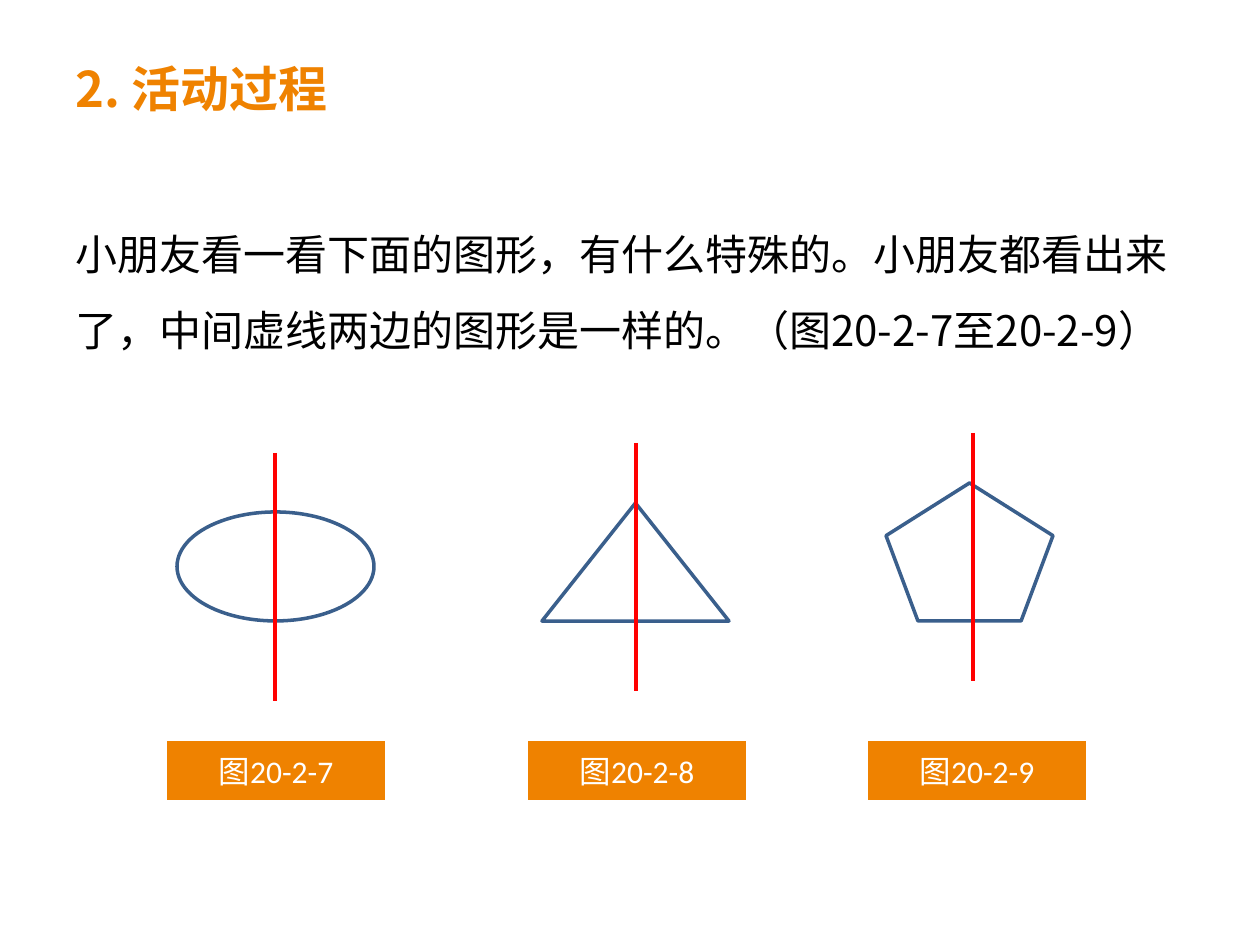
from lxml.etree import SubElement
from pptx import Presentation
from pptx.dml.color import RGBColor
from pptx.enum.shapes import MSO_CONNECTOR, MSO_SHAPE
from pptx.enum.text import MSO_ANCHOR, PP_ALIGN
from pptx.oxml.ns import qn
from pptx.util import Emu, Pt

CJK = "Noto Sans CJK SC"
ORANGE, WHITE, BLACK, BLUE, RED = "EF8200", "FFFFFF", "000000", "3A5F8C", "FF0000"


def px(n):
    """Pixels at 126 to the inch, as EMU."""
    return Emu(round(n * 914400 / 126))


def rgb(value):
    return RGBColor.from_string(value)


def write(tf, text, size, color, font=CJK, bold=False, align=PP_ALIGN.LEFT):
    """Fill a text frame with one paragraph and return that paragraph."""
    tf.word_wrap = True
    tf.text = text
    p = tf.paragraphs[0]
    p.alignment = align
    f = p.font
    f.size, f.bold, f.name = Pt(size), bold, font
    f.color.rgb = rgb(color)
    r_pr = p._p.pPr.find(qn("a:defRPr"))
    SubElement(r_pr, qn("a:ea")).set("typeface", CJK)
    return p


def add_title(s, text):
    sp = s.shapes.title
    sp.left, sp.top, sp.width, sp.height = map(px, (63, 38, 1134, 100))
    sp.text_frame.vertical_anchor = MSO_ANCHOR.MIDDLE
    write(sp.text_frame, text, 28, ORANGE, bold=True)


def add_body(s, text):
    sp = s.shapes.add_textbox(*map(px, (63, 197, 1134, 513)))
    p = write(sp.text_frame, text, 24, BLACK)
    p.line_spacing = 1.5
    p.space_before = Pt(5)


def add_outline(s, kind, box):
    sp = s.shapes.add_shape(kind, *map(px, box))
    sp.shadow.inherit = False
    sp.fill.background()
    sp.line.color.rgb = rgb(BLUE)
    sp.line.width = Pt(2)


def add_axis(s, x, top):
    """Draw a vertical line of symmetry."""
    line = s.shapes.add_connector(MSO_CONNECTOR.STRAIGHT, px(x), px(top), px(x), px(top + 248))
    line.line.color.rgb = rgb(RED)
    line.line.width = Pt(2.25)
    SubElement(line._element.spPr, qn("a:effectLst"))


def add_label(s, x, text):
    sp = s.shapes.add_shape(MSO_SHAPE.RECTANGLE, px(x), px(741), px(218), px(59))
    sp.shadow.inherit = False
    sp.fill.solid()
    sp.fill.fore_color.rgb = rgb(ORANGE)
    sp.line.fill.background()
    sp.text_frame.vertical_anchor = MSO_ANCHOR.MIDDLE
    write(sp.text_frame, text, 18, WHITE, "Calibri", align=PP_ALIGN.CENTER)


def main():
    prs = Presentation()
    prs.slide_width, prs.slide_height = px(1260), px(945)
    s = prs.slides.add_slide(prs.slide_layouts[5])

    add_title(s, "2. 活动过程")
    add_body(s, "小朋友看一看下面的图形，有什么特殊的。小朋友都看出来了，"
                "中间虚线两边的图形是一样的。（图20-2-7至20-2-9）")

    # kind, outline box, axis x and top, label left
    figures = [
        (MSO_SHAPE.OVAL, (177, 512, 197, 109), (275, 453), 167),
        (MSO_SHAPE.ISOSCELES_TRIANGLE, (542, 503, 187, 118), (636, 443), 528),
        (MSO_SHAPE.REGULAR_PENTAGON, (886, 483, 167, 138), (973, 433), 868),
    ]
    for number, (kind, box, axis, label_x) in enumerate(figures, 7):
        add_outline(s, kind, box)
        add_axis(s, *axis)
        add_label(s, label_x, f"图20-2-{number}")

    prs.save("out.pptx")


if __name__ == "__main__":
    main()
